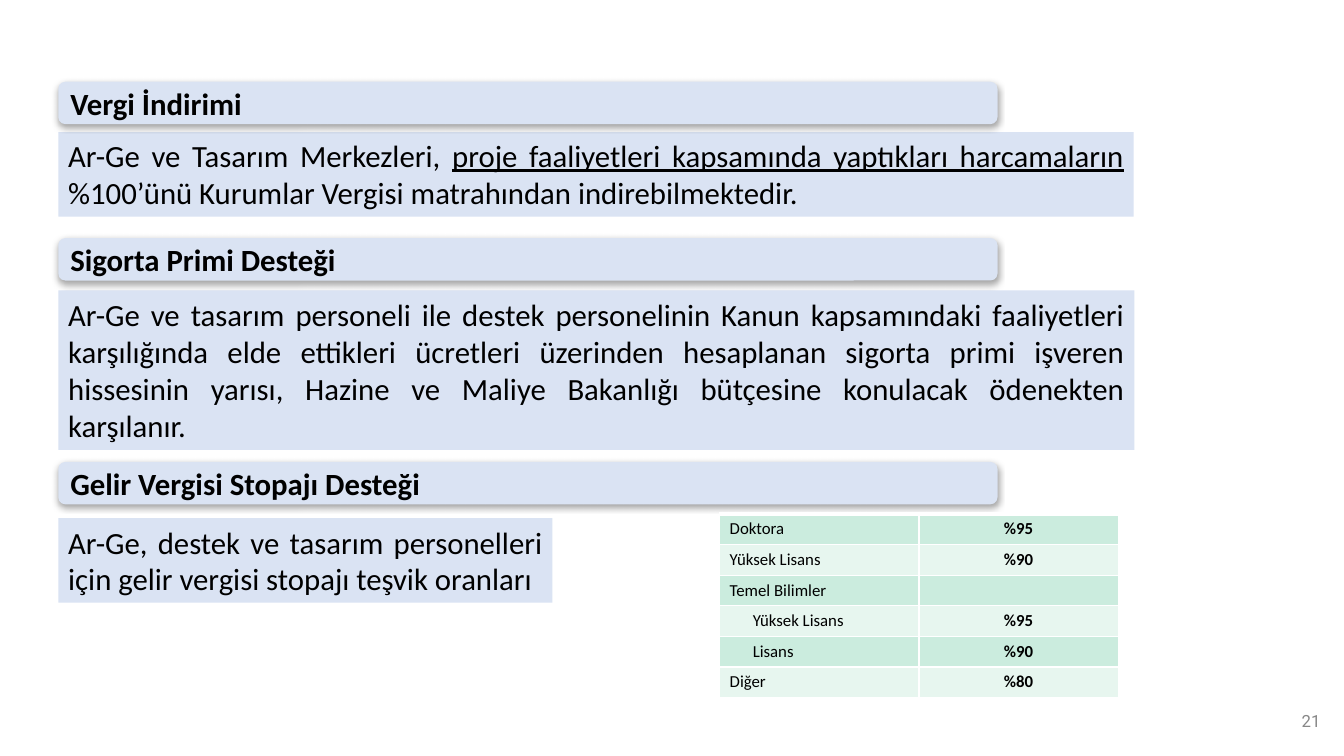
from lxml.etree import SubElement
from pptx import Presentation
from pptx.dml.color import RGBColor
from pptx.enum.shapes import MSO_SHAPE
from pptx.enum.text import MSO_ANCHOR, PP_ALIGN
from pptx.oxml import parse_xml
from pptx.oxml.ns import nsdecls, qn
from pptx.util import Cm, Pt

THEME = {
    "panel": "DAE3F3", "text": "000000", "number": "888888", "border": "FFFFFF",
    "bands": ("CBECDE", "E7F6EF"),
    "font": "Calibri", "number_font": "Roboto",
    "body_size": 22, "small_size": 12,
}

# Lengths in centimetres; body texts are lists of (text, underlined).
LEFT = 1.47
HEADING_WIDTH, HEADING_HEIGHT = 23.67, 1.07
SECTIONS = [
    {"heading": "Vergi İndirimi", "heading_top": 2.06,
     "body_box": (3.33, 27.1, 2.13),
     "body": [("Ar-Ge ve Tasarım Merkezleri, ", False),
              ("proje faaliyetleri kapsamında yaptıkları harcamaların", True),
              (" %100’ünü Kurumlar Vergisi matrahından indirebilmektedir.", False)]},
    {"heading": "Sigorta Primi Desteği", "heading_top": 6.0,
     "body_box": (7.32, 27.12, 4.02),
     "body": [("Ar-Ge ve tasarım personeli ile destek personelinin Kanun kapsamındaki "
               "faaliyetleri karşılığında elde ettikleri ücretleri üzerinden hesaplanan "
               "sigorta primi işveren hissesinin yarısı, Hazine ve Maliye Bakanlığı "
               "bütçesine konulacak ödenekten karşılanır.", False)]},
    {"heading": "Gelir Vergisi Stopajı Desteği", "heading_top": 11.64,
     "body_box": (13.06, 12.45, 2.13),
     "body": [("Ar-Ge, destek ve tasarım personelleri için gelir vergisi stopajı "
               "teşvik oranları", False)]},
]

# (label, rate, indented)
RATES = [
    ("Doktora", "%95", False),
    ("Yüksek Lisans", "%90", False),
    ("Temel Bilimler", "", False),
    ("Yüksek Lisans", "%95", True),
    ("Lisans", "%90", True),
    ("Diğer", "%80", False),
]
TABLE_LEFT, TABLE_TOP = 18.14, 12.95
COLUMN_WIDTH, ROW_HEIGHT = 5.02, 0.76
CELL_MARGIN, LABEL_INDENT = 0.25, 0.58
PAGE_NUMBER = "21"


def color(name):
    return RGBColor.from_string(name)


def style_font(font, size, bold=False, name=THEME["font"], fill=THEME["text"]):
    font.size, font.bold, font.name = Pt(size), bold, name
    font.color.rgb = color(fill)


def add_panel(slide, preset, top, width, height, pieces, bold=False):
    shape = slide.shapes.add_shape(preset, Cm(LEFT), Cm(top), Cm(width), Cm(height))
    shape.shadow.inherit = False
    shape.fill.solid()
    shape.fill.fore_color.rgb = color(THEME["panel"])
    shape.line.fill.background()
    shape.text_frame.word_wrap = True
    paragraph = shape.text_frame.paragraphs[0]
    paragraph.alignment = PP_ALIGN.JUSTIFY
    for text, underlined in pieces:
        run = paragraph.add_run()
        run.text = text
        style_font(run.font, THEME["body_size"], bold)
        run.font.underline = underlined
    return shape


def add_drop_shadow(shape):
    effects = shape.element.spPr.find(qn("a:effectLst"))
    effects.append(parse_xml(
        f'<a:outerShdw {nsdecls("a")} blurRad="{Pt(5)}" dist="{Pt(1.8)}" dir="5400000" '
        'rotWithShape="0"><a:srgbClr val="000000"><a:alpha val="35000"/></a:srgbClr>'
        '</a:outerShdw>'))


def set_borders(cell, top_width):
    properties = cell._tc.get_or_add_tcPr()
    for position, (side, width) in enumerate(
            [("L", 1), ("R", 1), ("T", top_width), ("B", 1)]):
        properties.insert(position, parse_xml(
            f'<a:ln{side} {nsdecls("a")} w="{Pt(width)}"><a:solidFill>'
            f'<a:srgbClr val="{THEME["border"]}"/></a:solidFill></a:ln{side}>'))


def fill_cell(cell, text, row, bold, alignment, indent):
    cell.fill.solid()
    cell.fill.fore_color.rgb = color(THEME["bands"][row % 2])
    set_borders(cell, 3 if row == 0 else 1)
    cell.margin_left = Cm(CELL_MARGIN + indent)
    cell.text_frame.text = text
    paragraph = cell.text_frame.paragraphs[0]
    paragraph.alignment = alignment
    for run in paragraph.runs:
        style_font(run.font, THEME["small_size"], bold)
    if not text:
        # The size of an empty cell's text keeps its row from growing.
        SubElement(paragraph._p, qn("a:endParaRPr"), sz=str(THEME["small_size"] * 100))


def add_rate_table(slide):
    table = slide.shapes.add_table(
        len(RATES), 2, Cm(TABLE_LEFT), Cm(TABLE_TOP),
        Cm(2 * COLUMN_WIDTH), Cm(len(RATES) * ROW_HEIGHT)).table
    for column in table.columns:
        column.width = Cm(COLUMN_WIDTH)
    table.first_row = table.horz_banding = False
    for row, (label, rate, indented) in enumerate(RATES):
        table.rows[row].height = Cm(ROW_HEIGHT)
        indent = LABEL_INDENT if indented else 0
        fill_cell(table.cell(row, 0), label, row, False, PP_ALIGN.LEFT, indent)
        fill_cell(table.cell(row, 1), rate, row, True, PP_ALIGN.CENTER, 0)


def add_page_number(slide):
    frame = slide.shapes.add_textbox(Cm(25.91), Cm(17.65), Cm(7.62), Cm(1.02)).text_frame
    frame.word_wrap = True
    frame.vertical_anchor = MSO_ANCHOR.MIDDLE
    frame.text = PAGE_NUMBER
    paragraph = frame.paragraphs[0]
    paragraph.alignment = PP_ALIGN.RIGHT
    style_font(paragraph.runs[0].font, THEME["small_size"],
               name=THEME["number_font"], fill=THEME["number"])


def main():
    presentation = Presentation()
    presentation.slide_width, presentation.slide_height = Cm(33.87), Cm(19.05)
    slide = presentation.slides.add_slide(presentation.slide_layouts[6])
    for section in SECTIONS:
        body = add_panel(slide, MSO_SHAPE.RECTANGLE, *section["body_box"], section["body"])
        body.text_frame.vertical_anchor = MSO_ANCHOR.TOP
        heading = add_panel(slide, MSO_SHAPE.ROUNDED_RECTANGLE, section["heading_top"],
                            HEADING_WIDTH, HEADING_HEIGHT,
                            [(section["heading"], False)], bold=True)
        heading.text_frame.vertical_anchor = MSO_ANCHOR.MIDDLE
        add_drop_shadow(heading)
    add_rate_table(slide)
    add_page_number(slide)
    presentation.save("out.pptx")


if __name__ == "__main__":
    main()
